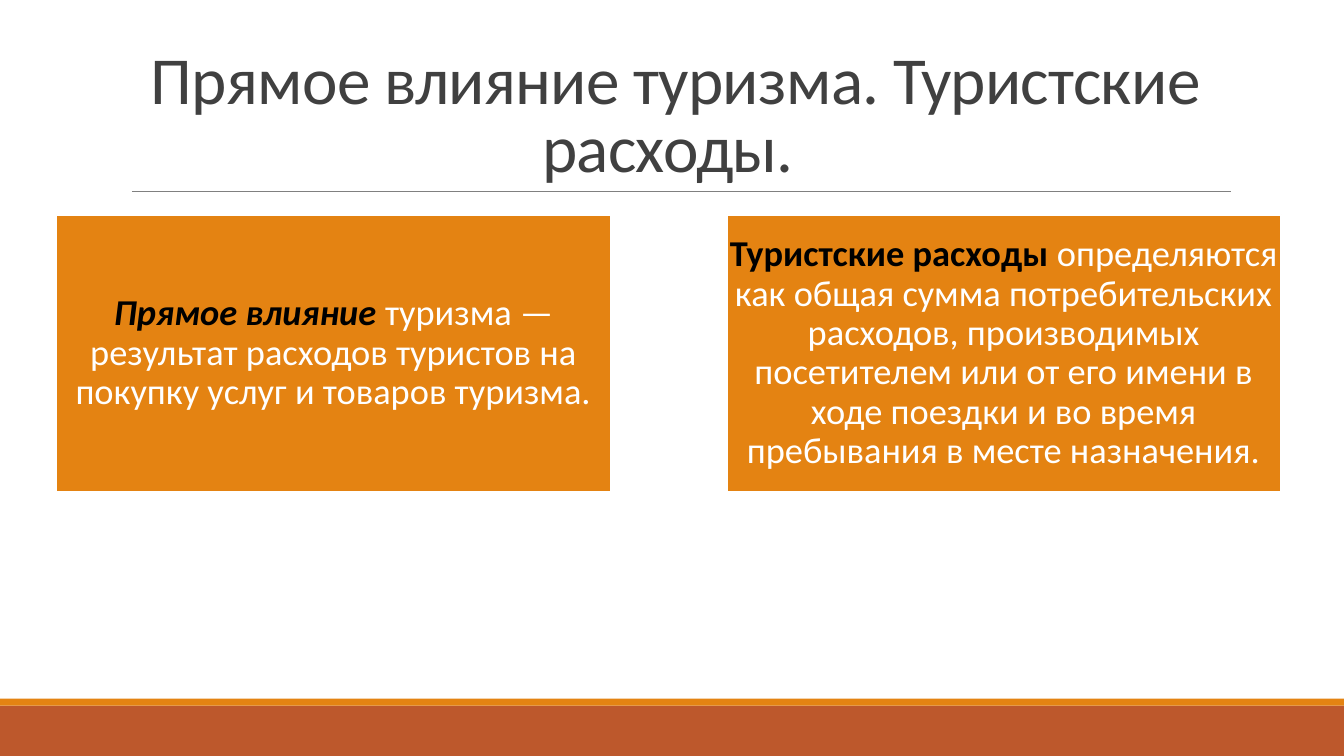
import pptx
import pptx.dml.color
import pptx.enum.shapes
import pptx.enum.text
import pptx.oxml.ns
import pptx.util
import lxml.etree

Pt = pptx.util.Pt
ORANGE, RUST, WHITE, BLACK = "E48312", "BD582C", "FFFFFF", "000000"
DARK_GREY, MID_GREY = "404040", "808080"


def color(value):
    return pptx.dml.color.RGBColor.from_string(value)


class Page:
    font = "Calibri"

    def __init__(self, deck):
        self.slide = deck.slides.add_slide(deck.slide_layouts[6])
        self.shapes = self.slide.shapes

    def rectangle(self, left, top, width, height, fill, outline=None):
        box = self.shapes.add_shape(
            pptx.enum.shapes.MSO_SHAPE.RECTANGLE,
            Pt(left), Pt(top), Pt(width), Pt(height))
        box.shadow.inherit = False
        box.fill.solid()
        box.fill.fore_color.rgb = color(fill)
        if outline:
            box.line.color.rgb = color(outline)
            box.line.width = Pt(1.25)
        else:
            box.line.fill.background()
        return box

    def rule(self, left, right, y):
        line = self.shapes.add_connector(
            pptx.enum.shapes.MSO_CONNECTOR.STRAIGHT,
            Pt(left), Pt(y), Pt(right), Pt(y))
        line.line.color.rgb = color(MID_GREY)
        line.line.width = Pt(0.5)
        lxml.etree.SubElement(line._element.spPr, pptx.oxml.ns.qn("a:effectLst"))

    def set_text(self, box, spans, size, line_spacing, anchor, inset):
        """Fill a box with one centred paragraph of (text, colour, bold, italic) spans."""
        frame = box.text_frame
        frame.word_wrap = True
        frame.vertical_anchor = anchor
        frame.margin_left = frame.margin_right = Pt(inset[0])
        frame.margin_top = frame.margin_bottom = Pt(inset[1])
        para = frame.paragraphs[0]
        para.alignment = pptx.enum.text.PP_ALIGN.CENTER
        para.line_spacing = line_spacing
        for text, shade, bold, italic in spans:
            span = para.add_run()
            span.text = text
            span.font.name = self.font
            span.font.size = Pt(size)
            span.font.bold = bold
            span.font.italic = italic
            span.font.color.rgb = color(shade)
        return para

    def title(self, text, left, top, width, height):
        box = self.shapes.add_textbox(Pt(left), Pt(top), Pt(width), Pt(height))
        para = self.set_text(box, [(text, DARK_GREY, False, False)], 48, 0.85,
                             pptx.enum.text.MSO_ANCHOR.BOTTOM, (7.2, 3.6))
        para.runs[0].font._element.set("spc", "-50")

    def card(self, left, top, width, height, spans):
        box = self.rectangle(left, top, width, height, ORANGE, WHITE)
        self.set_text(box, spans, 26, 0.9,
                      pptx.enum.text.MSO_ANCHOR.MIDDLE, (1.3, 1.3))


def main():
    deck = pptx.Presentation()
    deck.slide_width, deck.slide_height = Pt(960), Pt(540)
    page = Page(deck)

    page.rectangle(0, 504, 960, 36, RUST)
    page.rectangle(0, 499, 960, 5, ORANGE)
    page.rule(94.3, 879, 136.8)
    page.title("Прямое влияние туризма. Туристские расходы. ", 86.4, 22.3, 792, 114.5)

    definitions = [
        ("Прямое влияние ", True,
         "туризма — результат расходов туристов на покупку услуг и товаров туризма."),
        ("Туристские расходы ", False,
         "определяются как общая сумма потребительских расходов, производимых "
         "посетителем или от его имени в ходе поездки и во время пребывания "
         "в месте назначения."),
    ]
    for index, (term, italic, meaning) in enumerate(definitions):
        page.card(40.3 + index * 478.8, 153.4, 396, 198,
                  [(term, BLACK, True, italic), (meaning, WHITE, False, False)])

    deck.save("out.pptx")


if __name__ == "__main__":
    main()
